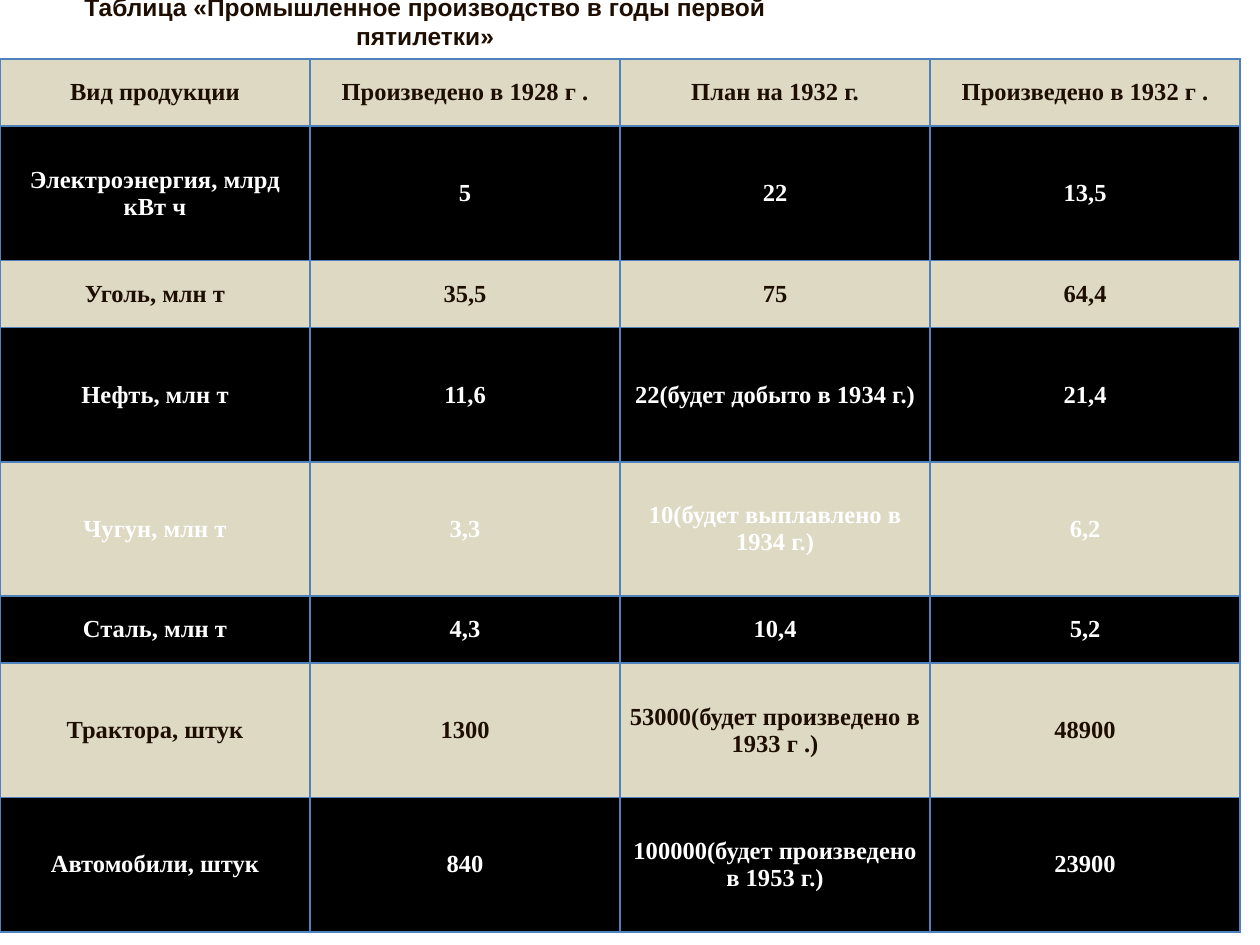
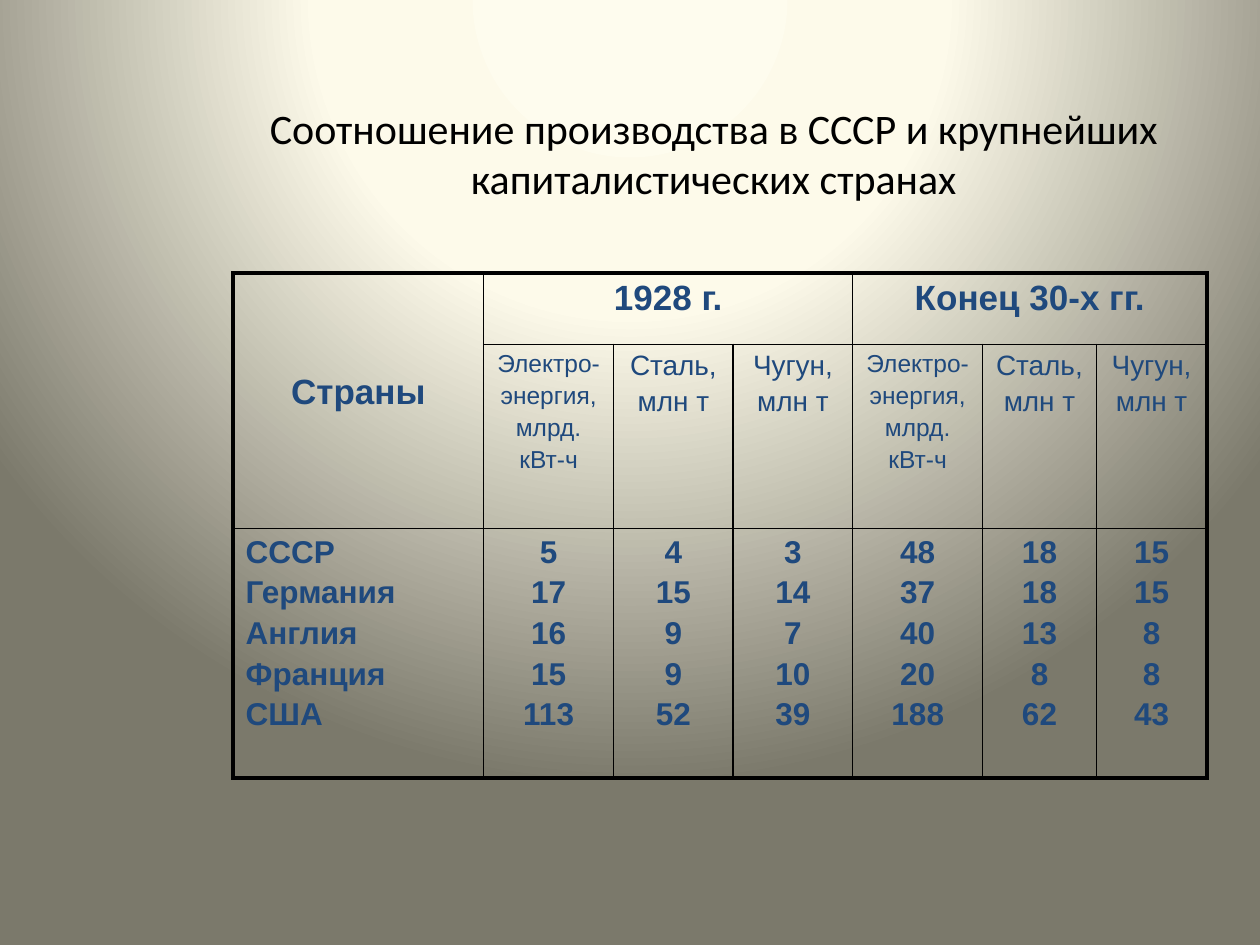
from dataclasses import dataclass

from pptx import Presentation, util as u
from pptx.dml import color
from pptx.enum import text
from pptx.oxml import ns, parse_xml

# Content
PLAN_TITLE = "Таблица «Промышленное производство в годы первой пятилетки»"
PLAN_ROWS = [
    ("Вид продукции", "Произведено в 1928 г .", "План на 1932 г.", "Произведено в 1932 г ."),
    ("Электроэнергия, млрд кВт ч", "5", "22", "13,5"),
    ("Уголь, млн т", "35,5", "75", "64,4"),
    ("Нефть, млн т", "11,6", "22(будет добыто в 1934 г.)", "21,4"),
    ("Чугун, млн т", "3,3", "10(будет выплавлено в 1934 г.)", "6,2"),
    ("Сталь, млн т", "4,3", "10,4", "5,2"),
    ("Трактора, штук", "1300", "53000(будет произведено в 1933 г .)", "48900"),
    ("Автомобили, штук", "840", "100000(будет произведено в 1953 г.)", "23900"),
]
LOW_ROWS = {0, 2, 5}    # half the height of the others
PALE_TEXT_ROW = 4       # white text on the light band

RATIO_TITLE = "Соотношение производства в СССР и крупнейших капиталистических странах"
COUNTRY_HEAD = "Страны"
PERIODS = ["1928 г.", "Конец 30-х гг."]
PRODUCTS = [("Электро-\nэнергия,\nмлрд.\nкВт-ч", 14), ("Сталь,\nмлн т", 16), ("Чугун,\nмлн т", 16)]
COUNTRIES = {
    "СССР": (5, 4, 3, 48, 18, 15),
    "Германия": (17, 15, 14, 37, 18, 15),
    "Англия": (16, 9, 7, 40, 13, 8),
    "Франция": (15, 9, 10, 20, 8, 8),
    "США": (113, 52, 39, 188, 62, 43),
}


@dataclass(frozen=True)
class Theme:
    dark: str = "1E0E01"
    light: str = "FFFFFF"
    band: str = "DDD9C3"
    black: str = "000000"
    grid: str = "4F81BD"
    blue: str = "1F497D"
    glow: tuple = ((0, "FEFCEE"), (40, "FDFAEA"), (100, "7B796B"))
    sans: str = "Arial"
    serif: str = "Times New Roman"
    heading: str = "Calibri"
    small: int = 14
    body: int = 18
    head: int = 20
    title: int = 24
    thin: float = 1
    thick: float = 2.25


T = Theme()
NO_STYLE = "{2D5ABB26-0587-4C30-8999-92F81FD0307C}"
CENTER, LEFT = text.PP_ALIGN.CENTER, text.PP_ALIGN.LEFT
MIDDLE, TOP = text.MSO_ANCHOR.MIDDLE, text.MSO_ANCHOR.TOP


def write(tf, words, font, size, rgb, bold=False, align=CENTER):
    """Fill a text frame, one paragraph per line."""
    tf.text = words
    tf.word_wrap = True
    for i, p in enumerate(tf.paragraphs):
        p.alignment = align
        if i:
            p.space_before = u.Pt(round(size * 0.17, 1))
        for r in p.runs:
            r.font.name, r.font.size, r.font.bold = font, u.Pt(size), bold
            r.font.color.rgb = color.RGBColor.from_string(rgb)


def add_title(s, words, left, top, width, height, font, size, rgb, bold=False):
    tf = s.shapes.add_textbox(*map(u.Cm, (left, top, width, height))).text_frame
    write(tf, words, font, size, rgb, bold)
    tf.vertical_anchor = MIDDLE
    return tf


def add_grid(s, left, top, widths, heights):
    """Add a plain table with the given column widths and row heights."""
    frame = s.shapes.add_table(len(heights), len(widths), u.Cm(left), u.Cm(top),
                               u.Cm(sum(widths)), u.Cm(sum(heights)))
    table = frame.table
    table.first_row = table.horz_banding = False
    table._tbl.tblPr[0].text = NO_STYLE
    for col, width in zip(table.columns, widths):
        col.width = u.Cm(width)
    for row, height in zip(table.rows, heights):
        row.height = u.Cm(height)
    return table


def set_borders(table, rgb, inner, outer):
    """Draw every cell's edges; the table's rim gets the outer width."""
    last_row, last_col = len(table.rows), len(table.columns)
    for r in range(last_row):
        for c in range(last_col):
            cell = table.cell(r, c)
            rim = {"L": c == 0, "R": c + cell.span_width == last_col,
                   "T": r == 0, "B": r + cell.span_height == last_row}
            for i, (side, at_rim) in enumerate(rim.items()):
                width = u.Pt(outer if at_rim else inner)
                cell._tc.get_or_add_tcPr().insert(i, parse_xml(
                    f'<a:ln{side} {ns.nsdecls("a")} w="{width}"><a:solidFill>'
                    f'<a:srgbClr val="{rgb}"/></a:solidFill></a:ln{side}>'))


def set_glow(s):
    """Radial background centred above the slide."""
    stops = "".join(f'<a:gs pos="{pos * 1000}"><a:srgbClr val="{rgb}"/></a:gs>'
                    for pos, rgb in T.glow)
    s.element.cSld.insert(0, parse_xml(
        f'<p:bg {ns.nsdecls("p", "a")}><p:bgPr><a:gradFill rotWithShape="1">'
        f'<a:gsLst>{stops}</a:gsLst><a:path path="circle">'
        '<a:fillToRect l="50000" t="-80000" r="50000" b="180000"/></a:path>'
        '</a:gradFill><a:effectLst/></p:bgPr></p:bg>'))


def plan_slide(s):
    unit = 17.6 / 13    # height of a low row
    heights = [unit if r in LOW_ROWS else 2 * unit for r in range(len(PLAN_ROWS))]
    table = add_grid(s, 0, 1.19, [6.25] * 4, heights)
    set_borders(table, T.grid, T.thin, T.thin)
    for r, row in enumerate(PLAN_ROWS):
        fill = T.black if r % 2 else T.band
        ink = T.light if r % 2 or r == PALE_TEXT_ROW else T.dark
        for c, words in enumerate(row):
            cell = table.cell(r, c)
            write(cell.text_frame, words, T.serif, T.small, ink, bold=True)
            cell.vertical_anchor = MIDDLE
            cell.margin_left = cell.margin_right = u.Cm(0.19)
            cell.margin_top = cell.margin_bottom = 0
            cell.fill.solid()
            cell.fill.fore_color.rgb = color.RGBColor.from_string(fill)
    tf = add_title(s, PLAN_TITLE, 0, 0, 17.14, 0.86, T.sans, T.small, T.dark, bold=True)
    tf.margin_left = tf.margin_right = u.Cm(0.5)


def ratio_slide(s):
    set_glow(s)
    add_title(s, RATIO_TITLE, 4.65, 1.27, 19.48, 3.61, T.heading, T.title, T.black)
    table = add_grid(s, 4.7, 5.5, [5.05, 2.62, 2.41, 2.41, 2.62, 2.29, 2.23],
                     [1.44, 3.71, 5.03])

    # Merged headings
    table.cell(0, 0).merge(table.cell(1, 0))
    for c in (1, 4):
        table.cell(0, c).merge(table.cell(0, c + 2))
    set_borders(table, T.black, T.thin, T.thick)

    def put(r, c, words, size, bold=True, align=CENTER):
        cell = table.cell(r, c)
        write(cell.text_frame, words, T.sans, size, T.blue, bold, align)
        cell.vertical_anchor = TOP
        cell.fill.background()
        return cell

    corner = put(0, 0, COUNTRY_HEAD, T.head)
    corner.vertical_anchor = MIDDLE
    corner.margin_bottom = u.Cm(0.45)
    for i, period in enumerate(PERIODS):
        put(0, 1 + 3 * i, period, T.head)

    # Product heads and figures, one cell per column
    put(2, 0, "\n".join(COUNTRIES), T.body, align=LEFT)
    for c, figures in enumerate(zip(*COUNTRIES.values())):
        words, size = PRODUCTS[c % 3]
        put(1, c + 1, words, size, bold=False)
        put(2, c + 1, "\n".join(map(str, figures)), T.body)


def main():
    prs = Presentation()
    prs.slide_width, prs.slide_height = u.Cm(25.4), u.Cm(19.05)
    for build in (plan_slide, ratio_slide):
        build(prs.slides.add_slide(prs.slide_layouts[6]))
    prs.save("out.pptx")


if __name__ == "__main__":
    main()
